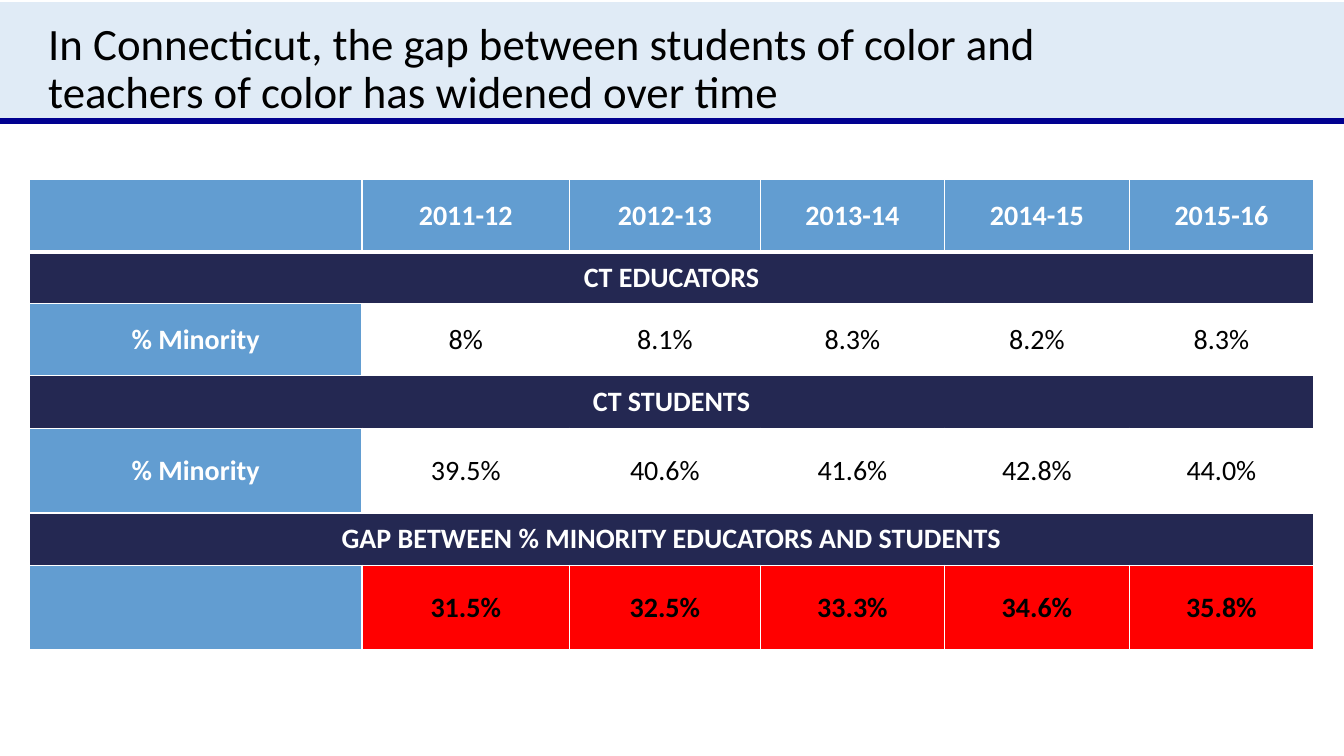
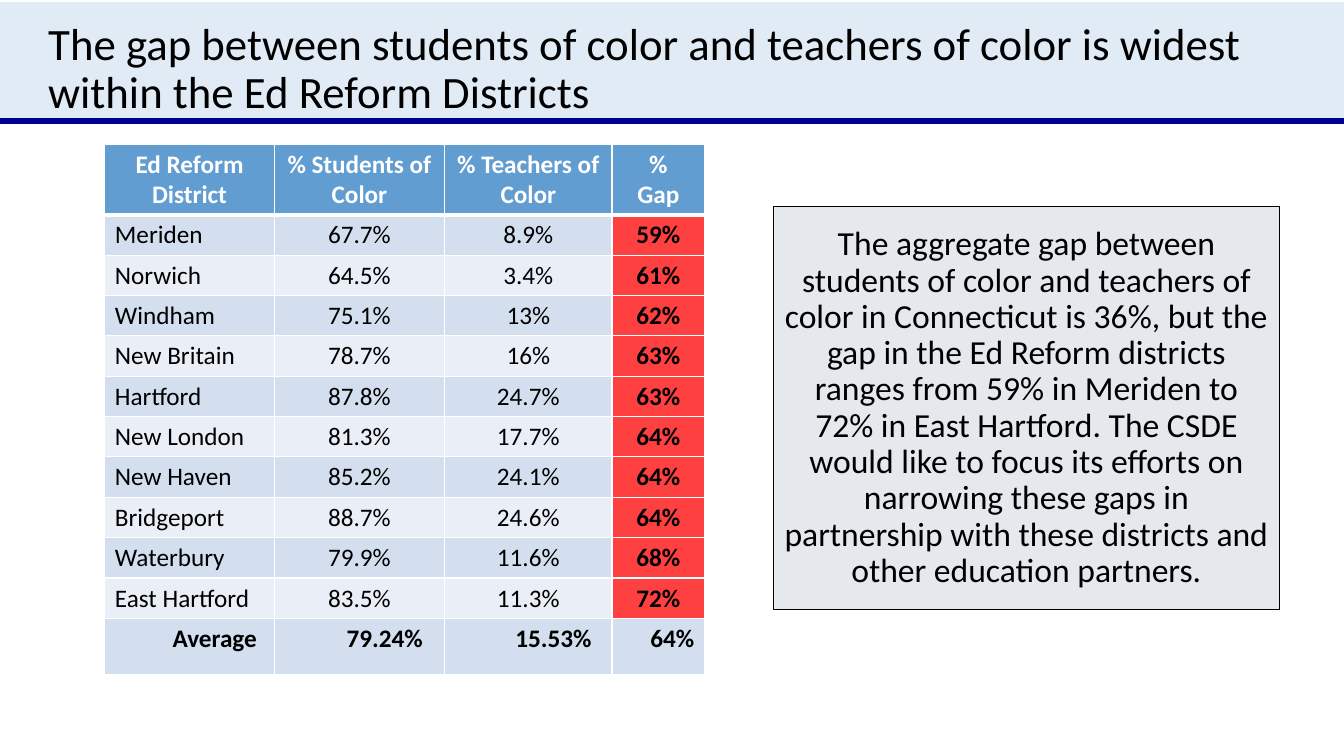
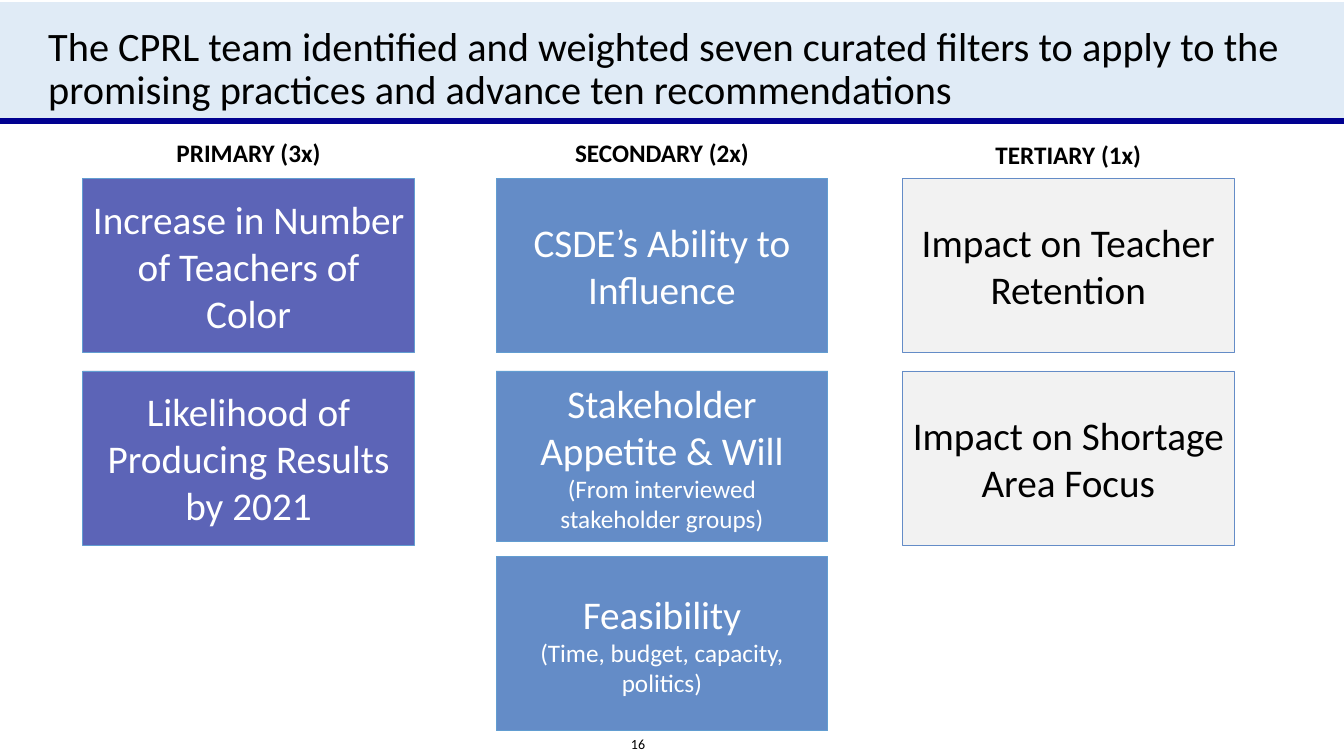
import dataclasses

import pptx
import pptx.dml.color
import pptx.enum.shapes
import pptx.enum.text
import pptx.oxml
import pptx.oxml.ns
import pptx.util
from lxml import etree

Inches = pptx.util.Inches
Align = pptx.enum.text.PP_ALIGN
Anchor = pptx.enum.text.MSO_ANCHOR
qn = pptx.oxml.ns.qn


@dataclasses.dataclass(frozen=True)
class Theme:
    font: str = "Calibri"
    # Colours
    black: str = "000000"
    white: str = "FFFFFF"
    band: str = "E0EBF6"
    rule: str = "000090"
    header: str = "629DD1"
    section: str = "242852"
    alert: str = "FF0000"
    row_dark: str = "D3DFEE"
    row_light: str = "EAEFF7"
    callout: str = "E5E9EE"
    primary: str = "5C64B7"
    secondary: str = "648CC7"
    tertiary: str = "F2F2F2"
    # Type sizes
    title: float = 32
    title_small: float = 28.8
    filter: float = 28
    callout_text: float = 24
    table_large: float = 20
    body: float = 18
    page_number: float = 10


THEME = Theme()


def rgb(value):
    return pptx.dml.color.RGBColor.from_string(value)


def write(frame, text, size=THEME.body, color=THEME.black, bold=False,
          align=Align.LEFT, spacing=None, note=None):
    """Fill a text frame: \\n parts paragraphs, \\v breaks a line, note is a smaller last paragraph."""
    lines = [(line, size) for line in text.split("\n")]
    if note:
        lines.append((note, THEME.body))
    for index, (line, line_size) in enumerate(lines):
        para = frame.add_paragraph() if index else frame.paragraphs[0]
        para.text = line
        para.alignment = align
        if spacing:
            para.line_spacing = spacing
        for span in para.runs:
            span.font.name = THEME.font
            span.font.size = pptx.util.Pt(line_size)
            span.font.bold = bold
            span.font.color.rgb = rgb(color)


def set_borders(cell, bottom):
    """White cell borders; must run before the cell gets its fill."""
    properties = cell._tc.get_or_add_tcPr()
    for side, width in (("L", 1), ("R", 1), ("T", 1), ("B", bottom)):
        line = etree.SubElement(properties, qn("a:ln" + side), w=str(pptx.util.Pt(width)))
        fill = etree.SubElement(line, qn("a:solidFill"))
        etree.SubElement(fill, qn("a:srgbClr"), val=THEME.white)


def set_opacity(cell, percent):
    color = cell._tc.tcPr.find(qn("a:solidFill"))[0]
    etree.SubElement(color, qn("a:alpha"), val=str(percent * 1000))


class Deck:
    def __init__(self):
        self.file = pptx.Presentation()
        self.file.slide_width = Inches(13.33)
        self.file.slide_height = Inches(7.5)
        self.page = None

    def start_page(self, title, size=THEME.title):
        """New slide with the shared title band, rule and title."""
        self.page = self.file.slides.add_slide(self.file.slide_layouts[6])
        self.box(0, 0.02, 13.33, 1.19, "", fill=THEME.band)
        self.rule(1.2)
        self.label(0.38, 0.19, 12.62, 1.01, title, anchor=Anchor.MIDDLE,
                   size=size, spacing=0.9)

    def rule(self, top):
        line = self.page.shapes.add_connector(
            pptx.enum.shapes.MSO_CONNECTOR.STRAIGHT,
            0, Inches(top), self.file.slide_width, Inches(top))
        line.line.color.rgb = rgb(THEME.rule)
        line.line.width = pptx.util.Pt(4.5)
        etree.SubElement(line._element.spPr, qn("a:effectLst"))

    def box(self, left, top, width, height, text, fill, line=None, weight=0.5, **style):
        box = self.page.shapes.add_shape(
            pptx.enum.shapes.MSO_SHAPE.RECTANGLE,
            Inches(left), Inches(top), Inches(width), Inches(height))
        box.shadow.inherit = False
        box.fill.solid()
        box.fill.fore_color.rgb = rgb(fill)
        if line:
            box.line.color.rgb = rgb(line)
            box.line.width = pptx.util.Pt(weight)
        else:
            box.line.fill.background()
        if text:
            box.text_frame.word_wrap = True
            box.text_frame.vertical_anchor = Anchor.MIDDLE
            write(box.text_frame, text, align=Align.CENTER, **style)

    def label(self, left, top, width, height, text, anchor=Anchor.TOP, **style):
        box = self.page.shapes.add_textbox(
            Inches(left), Inches(top), Inches(width), Inches(height))
        box.text_frame.word_wrap = True
        box.text_frame.vertical_anchor = anchor
        write(box.text_frame, text, **style)

    def table(self, left, top, widths, heights, rows, look):
        """look(row, column) gives a cell's format; a row of one text spans the table."""
        table = self.page.shapes.add_table(
            len(rows), len(widths), Inches(left), Inches(top),
            Inches(sum(widths)), Inches(sum(heights))).table
        for column, width in zip(table.columns, widths):
            column.width = Inches(width)
        for row, (height, texts) in enumerate(zip(heights, rows)):
            table.rows[row].height = Inches(height)
            if len(texts) == 1:
                table.cell(row, 0).merge(table.cell(row, len(widths) - 1))
            for column, text in enumerate(texts):
                self.cell(table.cell(row, column), text,
                          bottom=1 if row else 3, **look(row, column))

    def cell(self, cell, text, bottom, fill, opacity=None, anchor=Anchor.TOP,
             margins=(0.1, 0.05, 0.1, 0.05), **style):
        set_borders(cell, bottom)
        cell.fill.solid()
        cell.fill.fore_color.rgb = rgb(fill)
        if opacity:
            set_opacity(cell, opacity)
        (cell.margin_left, cell.margin_top,
         cell.margin_right, cell.margin_bottom) = map(Inches, margins)
        cell.vertical_anchor = anchor
        write(cell.text_frame, text, **style)


def build_trend(deck):
    deck.start_page("In Connecticut, the gap between students of color and\v"
                    "teachers of color has widened over time")
    rows = [
        ["", "2011-12", "2012-13", "2013-14", "2014-15", "2015-16"],
        ["CT EDUCATORS"],
        ["% Minority", "8%", "8.1%", "8.3%", "8.2%", "8.3%"],
        ["CT STUDENTS"],
        ["% Minority", "39.5%", "40.6%", "41.6%", "42.8%", "44.0%"],
        ["GAP BETWEEN % MINORITY EDUCATORS AND STUDENTS"],
        ["", "31.5%", "32.5%", "33.3%", "34.6%", "35.8%"],
    ]

    def look(row, column):
        style = dict(size=THEME.table_large, align=Align.CENTER, anchor=Anchor.MIDDLE,
                     margins=(0.07, 0, 0.07, 0), color=THEME.white, bold=True)
        if len(rows[row]) == 1:
            return dict(style, fill=THEME.section)
        if row == 0 or column == 0:
            return dict(style, fill=THEME.header)
        is_gap = row == len(rows) - 1
        return dict(style, fill=THEME.alert if is_gap else THEME.white,
                    color=THEME.black, bold=is_gap)

    deck.table(0.29, 1.78, [3.3, 2.06, 1.89, 1.83, 1.83, 1.83],
               [0.72, 0.51, 0.72, 0.52, 0.84, 0.52, 0.84], rows, look)


def build_districts(deck):
    deck.start_page("The gap between students of color and teachers of color is widest "
                    "within the Ed Reform Districts")
    deck.box(7.67, 2.05, 5.02, 4,
             "The aggregate gap between students of color and teachers of color in "
             "Connecticut is 36%, but the gap in the Ed Reform districts ranges from 59% "
             "in Meriden to 72% in East Hartford. The CSDE would like to focus its efforts "
             "on narrowing these gaps in partnership with these districts and other "
             "education partners.",
             fill=THEME.callout, line=THEME.black, weight=0.75,
             size=THEME.callout_text, spacing=0.9)
    rows = [
        ["Ed Reform District", "% Students of Color", "% Teachers of Color", "%\nGap"],
        ["Meriden", "67.7%", "8.9%", "59%"],
        ["Norwich", "64.5%", "3.4%", "61%"],
        ["Windham", "75.1%", "13%", "62%"],
        ["New Britain", "78.7%", "16%", "63%"],
        ["Hartford", "87.8%", "24.7%", "63%"],
        ["New London", "81.3%", "17.7%", "64%"],
        ["New Haven", "85.2%", "24.1%", "64%"],
        ["Bridgeport", "88.7%", "24.6%", "64%"],
        ["Waterbury", "79.9%", "11.6%", "68%"],
        ["East Hartford", "83.5%", "11.3%", "72%"],
        ["Average", "79.24%", "15.53%", "64%"],
    ]

    def look(row, column):
        is_gap = column == 3
        if row == 0:
            return dict(fill=THEME.header, color=THEME.white, bold=True, align=Align.CENTER)
        if row == len(rows) - 1:
            return dict(fill=THEME.row_dark, bold=True,
                        align=Align.LEFT if is_gap else Align.CENTER,
                        margins=(0.38 if is_gap else 0.6, 0.05, 0.05 if is_gap else 0.1, 0.05))
        if is_gap:
            return dict(fill=THEME.alert, opacity=75, bold=True, align=Align.CENTER)
        return dict(fill=THEME.row_dark if row % 2 else THEME.row_light,
                    align=Align.CENTER if column else Align.LEFT)

    deck.table(1.04, 1.43, [1.68, 1.69, 1.66, 0.92],
               [0.7] + [0.4] * 10 + [0.56], rows, look)


def build_filters(deck):
    deck.start_page("The CPRL team identified and weighted seven curated filters to apply "
                    "to the promising practices and advance ten recommendations",
                    size=THEME.title_small)
    width, inset = 3.29, 0.15
    tops = [1.77, 3.68, 5.52]
    # Each filter: text, smaller note, box height
    columns = [
        ("PRIMARY (3x)", 0.82, 1.31, THEME.primary, THEME.header, THEME.white, [
            ("Increase in Number of Teachers of Color", None, 1.73),
            ("Likelihood of Producing Results by 2021", None, 1.73)]),
        ("SECONDARY (2x)", 4.92, 1.31, THEME.secondary, THEME.header, THEME.white, [
            ("CSDE’s Ability to Influence", None, 1.73),
            ("Stakeholder Appetite & Will", "(From interviewed stakeholder groups)", 1.69),
            ("Feasibility", "(Time, budget, capacity, politics)", 1.73)]),
        ("TERTIARY (1x)", 8.95, 1.33, THEME.tertiary, THEME.secondary, THEME.black, [
            ("Impact on Teacher Retention", None, 1.73),
            ("Impact on Shortage Area Focus", None, 1.73)]),
    ]
    for heading, left, heading_top, fill, line, color, filters in columns:
        deck.label(left + inset, heading_top, width - 2 * inset, 0.4, heading,
                   bold=True, align=Align.CENTER)
        for top, (text, note, height) in zip(tops, filters):
            deck.box(left, top, width, height, text, fill=fill, line=line,
                     size=THEME.filter, color=color, note=note)
    # Page number
    deck.label(6.16, 7.25, 0.46, 0.25, "16", size=THEME.page_number)


def main():
    deck = Deck()
    build_trend(deck)
    build_districts(deck)
    build_filters(deck)
    deck.file.save("out.pptx")


if __name__ == "__main__":
    main()
